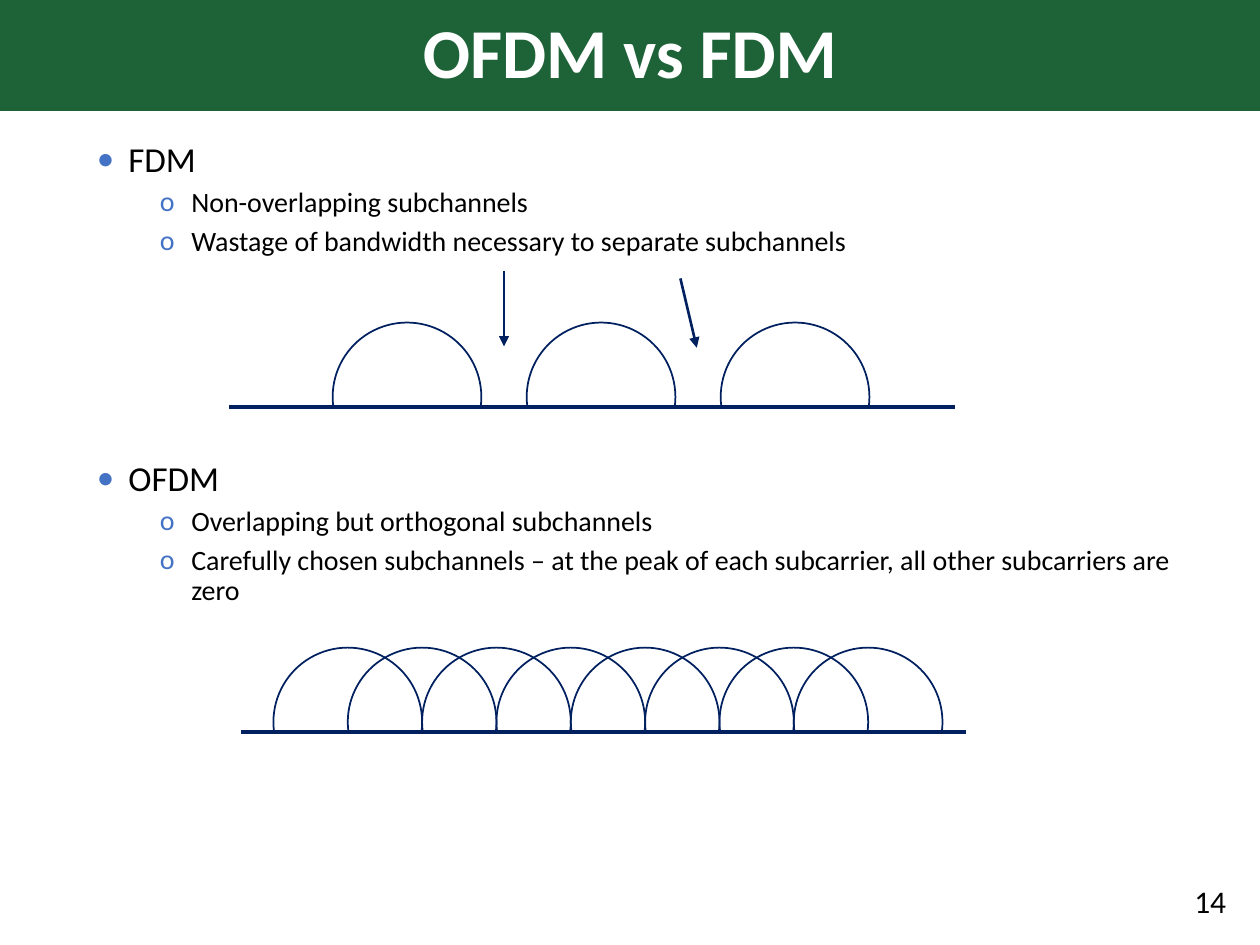
from dataclasses import dataclass

import lxml.etree
import pptx
import pptx.dml.color
import pptx.enum.shapes
import pptx.enum.text
import pptx.oxml.ns
import pptx.util

Inches = pptx.util.Inches
Align = pptx.enum.text.PP_ALIGN
Anchor = pptx.enum.text.MSO_ANCHOR
Shapes = pptx.enum.shapes.MSO_SHAPE

COLORS = {"banner": "1E6238", "title": "FFFFFF", "text": "000000",
          "bullet": "4472C4", "diagram": "002060"}
FONT = "Calibri"


@dataclass
class Level:
    size: int
    indent: float
    bullet: str


@dataclass
class Section:
    top: float
    height: float
    heading: str
    points: list[str]


@dataclass
class Spectrum:
    axis_left: float
    axis_y: float
    first_left: float
    step: float
    count: int


@dataclass
class Arrow:
    start: tuple[float, float]
    end: tuple[float, float]


HEADING = Level(20, 0.75, "•")
POINT = Level(16, 1.25, "o")
HANGING = 0.25

SECTIONS = [
    Section(1.08, 1.1, "FDM", [
        "Non-overlapping subchannels",
        "Wastage of bandwidth necessary to separate subchannels"]),
    Section(3.61, 1.35, "OFDM", [
        "Overlapping but orthogonal subchannels",
        "Carefully chosen subchannels – at the peak of each subcarrier, "
        "all other subcarriers are zero"]),
]
SPECTRA = [Spectrum(1.82, 3.23, 2.64, 1.54, 3),
           Spectrum(1.91, 5.81, 2.17, 0.59, 8)]
GUARD_BAND_ARROWS = [Arrow((4, 2.15), (4, 2.75)),
                     Arrow((5.4, 2.21), (5.53, 2.76))]

AXIS_LENGTH = 5.76
CHANNEL_SIZE = 1.18
CHANNEL_RISE = 0.67  # top of a subchannel above its axis


def rgb(name: str):
    return pptx.dml.color.RGBColor.from_string(COLORS[name])


def write(paragraph, text: str, *, size: float, color: str = "text",
          bold: bool = False, align=Align.LEFT, spacing: float = 0.9) -> None:
    paragraph.alignment = align
    paragraph.line_spacing = spacing
    run = paragraph.add_run()
    run.text = text
    run.font.name = FONT
    run.font.size = pptx.util.Pt(size)
    run.font.bold = bold
    run.font.color.rgb = rgb(color)


def add_bullet(paragraph, level: Level) -> None:
    qn = pptx.oxml.ns.qn
    properties = paragraph._p.get_or_add_pPr()
    properties.set("marL", str(Inches(level.indent)))
    properties.set("indent", str(-Inches(HANGING)))
    bullet_color = lxml.etree.SubElement(properties, qn("a:buClr"))
    lxml.etree.SubElement(bullet_color, qn("a:srgbClr"), val=COLORS["bullet"])
    lxml.etree.SubElement(properties, qn("a:buFont"), typeface=FONT)
    lxml.etree.SubElement(properties, qn("a:buChar"), char=level.bullet)


def add_section(slide, section: Section) -> None:
    box = slide.shapes.add_textbox(Inches(0.17), Inches(section.top),
                                   Inches(9.65), Inches(section.height))
    frame = box.text_frame
    frame.word_wrap = True
    lines = [(section.heading, HEADING)]
    lines += [(point, POINT) for point in section.points]
    for index, (text, level) in enumerate(lines):
        paragraph = frame.add_paragraph() if index else frame.paragraphs[0]
        write(paragraph, text, size=level.size)
        paragraph.space_before = pptx.util.Pt(5)
        add_bullet(paragraph, level)


def add_line(slide, start: tuple[float, float], end: tuple[float, float],
             width: float, arrowhead: bool = False) -> None:
    qn = pptx.oxml.ns.qn
    line = slide.shapes.add_connector(
        pptx.enum.shapes.MSO_CONNECTOR.STRAIGHT,
        Inches(start[0]), Inches(start[1]), Inches(end[0]), Inches(end[1]))
    line.line.color.rgb = rgb("diagram")
    line.line.width = pptx.util.Pt(width)
    if arrowhead:
        lxml.etree.SubElement(line.line._get_or_add_ln(), qn("a:tailEnd"),
                              type="triangle")
    lxml.etree.SubElement(line._element.spPr, qn("a:effectLst"))


def add_subchannel(slide, left: float, top: float) -> None:
    chord = slide.shapes.add_shape(Shapes.CHORD, Inches(left), Inches(top),
                                   Inches(CHANNEL_SIZE), Inches(CHANNEL_SIZE))
    chord.adjustments[0] = 36.27
    chord.adjustments[1] = 153.3
    chord.rotation = 112.2
    chord.shadow.inherit = False
    chord.fill.background()
    chord.line.color.rgb = rgb("diagram")
    chord.line.width = pptx.util.Pt(1)


def add_spectrum(slide, spectrum: Spectrum) -> None:
    add_line(slide, (spectrum.axis_left, spectrum.axis_y),
             (spectrum.axis_left + AXIS_LENGTH, spectrum.axis_y), 2)
    for index in range(spectrum.count):
        add_subchannel(slide, spectrum.first_left + index * spectrum.step,
                       spectrum.axis_y - CHANNEL_RISE)


def main() -> None:
    deck = pptx.Presentation()
    deck.slide_width, deck.slide_height = Inches(10), Inches(7.5)
    slide = deck.slides.add_slide(deck.slide_layouts[6])

    # Title banner
    banner = slide.shapes.add_shape(Shapes.RECTANGLE, 0, 0,
                                    Inches(10), Inches(0.88))
    banner.shadow.inherit = False
    banner.fill.solid()
    banner.fill.fore_color.rgb = rgb("banner")
    banner.line.fill.background()
    banner.text_frame.vertical_anchor = Anchor.MIDDLE
    write(banner.text_frame.paragraphs[0], "OFDM vs FDM", size=40,
          color="title", bold=True, align=Align.CENTER)

    # Bulleted sections
    for section in SECTIONS:
        add_section(slide, section)

    # Subchannel diagrams
    for spectrum in SPECTRA:
        add_spectrum(slide, spectrum)
    for arrow in GUARD_BAND_ARROWS:
        add_line(slide, arrow.start, arrow.end, 1.5, arrowhead=True)

    # Page number
    page_number = slide.shapes.add_textbox(Inches(7.58), Inches(6.95),
                                           Inches(2.25), Inches(0.4))
    page_number.text_frame.word_wrap = True
    page_number.text_frame.vertical_anchor = Anchor.MIDDLE
    write(page_number.text_frame.paragraphs[0], "14", size=18,
          align=Align.RIGHT, spacing=1.0)

    deck.save("out.pptx")


if __name__ == "__main__":
    main()
